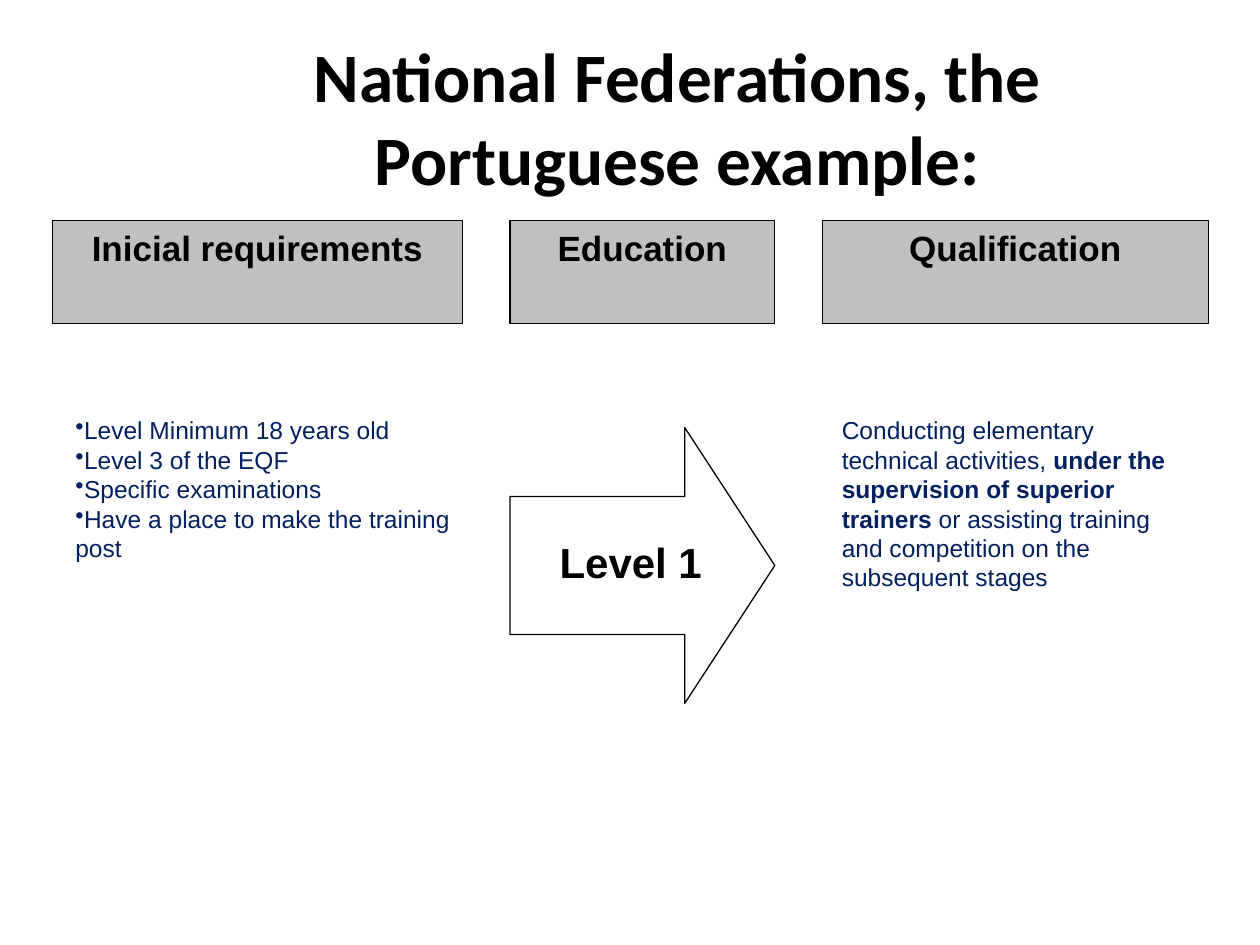
import pptx
import pptx.util
import pptx.dml.color
import pptx.enum.shapes
import pptx.enum.text
import pptx.oxml.ns
from lxml import etree

Cm = pptx.util.Cm
Color = pptx.dml.color.RGBColor
Kind = pptx.enum.shapes.MSO_SHAPE
Align = pptx.enum.text.PP_ALIGN
Anchor = pptx.enum.text.MSO_ANCHOR

BLACK = Color(0, 0, 0)
WHITE = Color(255, 255, 255)
GREY = Color(0xC0, 0xC0, 0xC0)
NAVY = Color(0, 0x20, 0x60)

TITLE = {"name": "Calibri", "size": 39.6, "bold": True, "color": BLACK}
HEAD = {"name": "Arial", "size": 20, "bold": True, "color": BLACK}
LEVEL = {**HEAD, "size": 24}
BODY = {"name": "Arial", "size": 14, "bold": False, "color": NAVY}
STRONG = {**BODY, "bold": True}


class Page:
    def __init__(self, deck):
        self.slide = deck.slides.add_slide(deck.slide_layouts[6])
        self.shapes = self.slide.shapes

    def label(self, shape, paras, align=Align.LEFT, anchor=Anchor.TOP, bullet=None):
        """Fill a shape with paragraphs, each a list of (text, style) runs."""
        frame = shape.text_frame
        frame.word_wrap = True
        frame.vertical_anchor = anchor
        for i, runs in enumerate(paras):
            para = frame.paragraphs[0] if i == 0 else frame.add_paragraph()
            para.alignment = align
            if bullet:
                props = para._p.get_or_add_pPr()
                mark = etree.SubElement(props, pptx.oxml.ns.qn("a:buChar"))
                mark.set("char", bullet)
            for text, style in runs:
                run = para.add_run()
                run.text = text
                self.style(run.font, style)

    def style(self, font, style):
        for key, value in style.items():
            if key == "color":
                font.color.rgb = value
            else:
                setattr(font, key, pptx.util.Pt(value) if key == "size" else value)

    def text(self, box, paras, **opts):
        shape = self.shapes.add_textbox(*map(Cm, box))
        self.label(shape, paras, **opts)

    def shape(self, kind, box, fill=None, line=None):
        shape = self.shapes.add_shape(kind, *map(Cm, box))
        shape.shadow.inherit = False
        if fill is None:
            shape.fill.background()
        else:
            shape.fill.solid()
            shape.fill.fore_color.rgb = fill
        if line is None:
            shape.line.fill.background()
        else:
            shape.line.color.rgb = line
            shape.line.width = pptx.util.Pt(0.75)
        return shape

    def panel(self, box, paras, fill, line=None, **opts):
        self.label(self.shape(Kind.RECTANGLE, box, fill, line), paras, **opts)

    def arrow(self, box, shaft, tip):
        shape = self.shape(Kind.RIGHT_ARROW, box, line=BLACK)
        shape.adjustments[0] = shaft
        shape.adjustments[1] = tip


def main():
    deck = pptx.Presentation()
    deck.slide_width, deck.slide_height = Cm(25.4), Cm(19.05)
    page = Page(deck)

    # Title
    page.text((3.18, 0.76, 20.95, 3.18),
              [[("National Federations, the Portuguese example:", TITLE)]],
              align=Align.CENTER, anchor=Anchor.MIDDLE)

    # Requirements and qualification texts
    needs = ["Level Minimum 18 years old", "Level 3 of the EQF",
             "Specific examinations", "Have a place to make the training post"]
    page.panel((1.27, 8.25, 8.25, 6.15), [[(need, BODY)] for need in needs],
               WHITE, bullet="•")
    page.panel((16.72, 8.25, 7.62, 5.69), [[
        ("Conducting elementary technical activities, ", BODY),
        ("under the supervision of superior trainers", STRONG),
        (" or assisting training and competition on the subsequent stages", BODY),
    ]], WHITE)

    # Column heads
    heads = [("Inicial requirements", 1.06, 8.26),
             ("Education", 10.28, 5.34),
             ("Qualification", 16.58, 7.78)]
    for name, left, width in heads:
        page.panel((left, 4.45, width, 2.08), [[(name, HEAD)]],
                   GREY, BLACK, align=Align.CENTER)

    # Level arrow
    page.arrow((10.28, 8.62, 5.34, 5.56), 0.5, 0.34)
    page.text((10.77, 10.7, 3.89, 2.16), [[("Level 1", LEVEL)]], align=Align.CENTER)

    deck.save("out.pptx")


if __name__ == "__main__":
    main()
